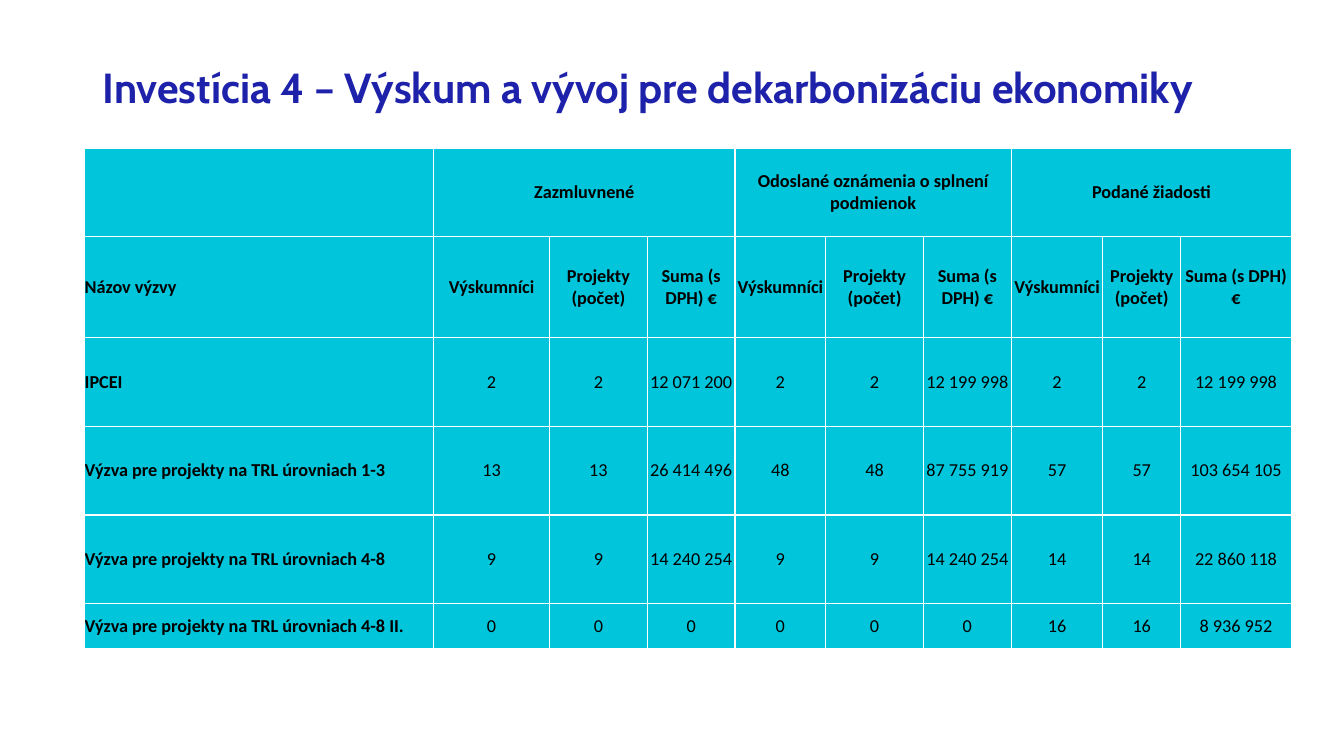
import dataclasses
import itertools

import pptx
import pptx.dml.color
import pptx.enum.text
import pptx.oxml
import pptx.oxml.ns
import pptx.presentation
import pptx.slide
import pptx.table
import pptx.util

Inches = pptx.util.Inches
Pt = pptx.util.Pt
RGBColor = pptx.dml.color.RGBColor
PP_ALIGN = pptx.enum.text.PP_ALIGN
MSO_ANCHOR = pptx.enum.text.MSO_ANCHOR

NAVY = RGBColor(0x1E, 0x22, 0xAA)
TURQUOISE = RGBColor(0x00, 0xC5, 0xDB)
BLACK = RGBColor(0x00, 0x00, 0x00)
WHITE = RGBColor(0xFF, 0xFF, 0xFF)

TITLE = "Investícia 4 – Výskum a vývoj pre dekarbonizáciu ekonomiky"
TITLE_FONT = {"name": "Cabin", "size": Pt(30), "bold": True}
TABLE_FONT = {"name": "Calibri", "size": Pt(13)}
CELL_FORMAT = {
    "margin_left": 0,
    "margin_right": 0,
    "margin_top": 0,
    "margin_bottom": 0,
    "vertical_anchor": MSO_ANCHOR.MIDDLE,
}

COLUMN_WIDTHS = [3.46, 1.15, 0.97, 0.87, 0.9, 0.97, 0.87, 0.91, 0.77, 1.1]
ROW_HEIGHTS = [0.88, 1, 0.88, 0.88, 0.88, 0.44]
STAGES = ["Zazmluvnené", "Odoslané oznámenia o splnení podmienok", "Podané žiadosti"]
MEASURES = ["Výskumníci", "Projekty (počet)", "Suma (s DPH) €"]


@dataclasses.dataclass(frozen=True)
class Counts:
    researchers: int
    projects: int
    amount: int

    def texts(self) -> list[str]:
        return [
            f"{number:,}".replace(",", " ")
            for number in (self.researchers, self.projects, self.amount)
        ]


@dataclasses.dataclass(frozen=True)
class Call:
    name: str
    stages: tuple[Counts, Counts, Counts]

    def texts(self) -> list[str]:
        counts = (stage.texts() for stage in self.stages)
        return [self.name, *itertools.chain.from_iterable(counts)]


CALLS = [
    Call("IPCEI", (Counts(2, 2, 12071200), Counts(2, 2, 12199998), Counts(2, 2, 12199998))),
    Call(
        "Výzva pre projekty na TRL úrovniach 1-3",
        (Counts(13, 13, 26414496), Counts(48, 48, 87755919), Counts(57, 57, 103654105)),
    ),
    Call(
        "Výzva pre projekty na TRL úrovniach 4-8",
        (Counts(9, 9, 14240254), Counts(9, 9, 14240254), Counts(14, 14, 22860118)),
    ),
    Call(
        "Výzva pre projekty na TRL úrovniach 4-8 II.",
        (Counts(0, 0, 0), Counts(0, 0, 0), Counts(16, 16, 8936952)),
    ),
]


def apply_format(target: object, values: dict[str, object]) -> None:
    for name, value in values.items():
        setattr(target, name, value)


def add_title(page: pptx.slide.Slide) -> None:
    title = page.shapes.title
    apply_format(
        title,
        {
            "left": Inches(0.92),
            "top": Inches(0.62),
            "width": Inches(11.67),
            "height": Inches(0.85),
        },
    )
    frame = title.text_frame
    apply_format(frame, {"word_wrap": True, "vertical_anchor": MSO_ANCHOR.TOP})
    para = frame.paragraphs[0]
    apply_format(para, {"alignment": PP_ALIGN.LEFT, "line_spacing": 0.9})
    span = para.add_run()
    span.text = TITLE
    apply_format(span.font, TITLE_FONT)
    span.font.color.rgb = NAVY


def add_borders(cell: pptx.table._Cell) -> None:
    properties = cell._tc.get_or_add_tcPr()
    for side in ("lnL", "lnR", "lnT", "lnB"):
        properties.append(
            pptx.oxml.parse_xml(
                f'<a:{side} {pptx.oxml.ns.nsdecls("a")} w="{Pt(1)}">'
                f'<a:solidFill><a:srgbClr val="{WHITE}"/></a:solidFill></a:{side}>'
            )
        )


def fill_cell(cell: pptx.table._Cell, text: str, bold: bool, alignment: PP_ALIGN) -> None:
    add_borders(cell)
    cell.fill.solid()
    cell.fill.fore_color.rgb = TURQUOISE
    apply_format(cell, CELL_FORMAT)
    if not text:
        return
    para = cell.text_frame.paragraphs[0]
    para.alignment = alignment
    span = para.add_run()
    span.text = text
    apply_format(span.font, {**TABLE_FONT, "bold": bold})
    span.font.color.rgb = BLACK


def add_calls_table(page: pptx.slide.Slide) -> None:
    stage_row = ["", *itertools.chain.from_iterable([stage, "", ""] for stage in STAGES)]
    measure_row = ["Názov výzvy", *MEASURES * len(STAGES)]
    rows = [stage_row, measure_row, *(call.texts() for call in CALLS)]
    table = page.shapes.add_table(
        len(rows),
        len(COLUMN_WIDTHS),
        Inches(0.84),
        Inches(1.47),
        Inches(sum(COLUMN_WIDTHS)),
        Inches(sum(ROW_HEIGHTS)),
    ).table
    for column, width in zip(table.columns, COLUMN_WIDTHS):
        column.width = Inches(width)
    for row, height in zip(table.rows, ROW_HEIGHTS):
        row.height = Inches(height)
    for row_index, texts in enumerate(rows):
        for column_index, text in enumerate(texts):
            is_name = column_index == 0
            fill_cell(
                table.cell(row_index, column_index),
                text,
                bold=is_name or row_index < 2,
                alignment=PP_ALIGN.LEFT if is_name else PP_ALIGN.CENTER,
            )
    for first in range(1, len(COLUMN_WIDTHS), len(MEASURES)):
        table.cell(0, first).merge(table.cell(0, first + len(MEASURES) - 1))


def main() -> None:
    deck = pptx.Presentation()
    deck.slide_width = Inches(13.33)
    deck.slide_height = Inches(7.5)
    page = deck.slides.add_slide(deck.slide_layouts.get_by_name("Title Only"))
    add_title(page)
    add_calls_table(page)
    deck.save("out.pptx")


if __name__ == "__main__":
    main()
